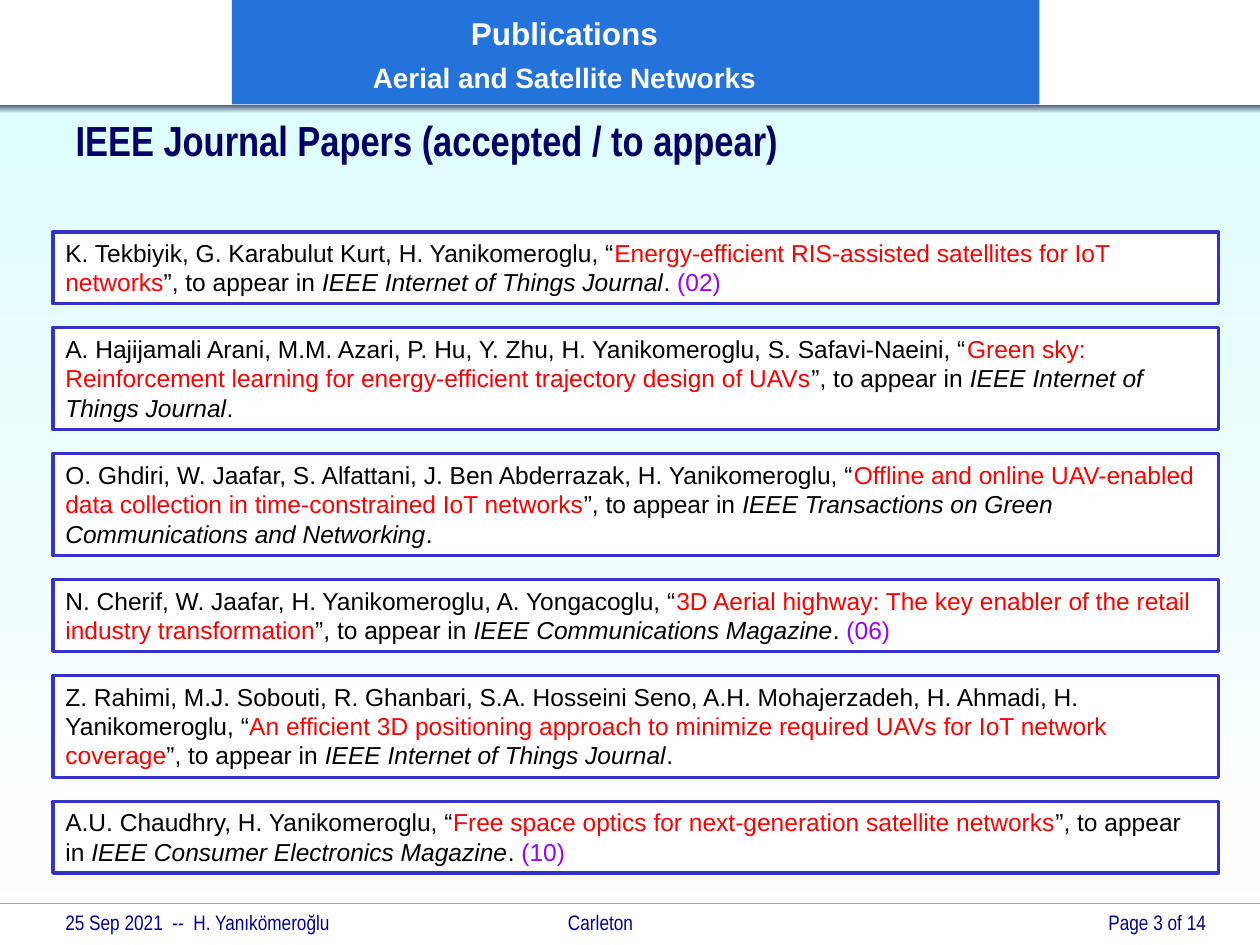
from pptx import Presentation
from pptx.dml.color import RGBColor
from pptx.enum.shapes import MSO_CONNECTOR as Link, MSO_SHAPE as Shape
from pptx.enum.text import MSO_ANCHOR as Anchor, PP_ALIGN as Align
from pptx.util import Inches, Pt
from lxml import etree

NAVY, BLACK, WHITE = "000099", "000000", "FFFFFF"
RED, VIOLET, SKY = "FF0000", "9900FF", "DFFDFD"
LINE, GAP = 0.24, 0.19

# authors, title, journal, note, lines of text
PAPERS = [
    ("K. Tekbiyik, G. Karabulut Kurt, H. Yanikomeroglu",
     "Energy-efficient RIS-assisted satellites for IoT networks",
     "IEEE Internet of Things Journal", "(02)", 2),
    ("A. Hajijamali Arani, M.M. Azari, P. Hu, Y. Zhu, H. Yanikomeroglu, "
     "S. Safavi-Naeini",
     "Green sky: Reinforcement learning for energy-efficient trajectory "
     "design of UAVs",
     "IEEE Internet of Things Journal", "", 3),
    ("O. Ghdiri, W. Jaafar, S. Alfattani, J. Ben Abderrazak, "
     "H. Yanikomeroglu",
     "Offline and online UAV-enabled data collection in time-constrained "
     "IoT networks",
     "IEEE Transactions on Green Communications and Networking", "", 3),
    ("N. Cherif, W. Jaafar, H. Yanikomeroglu, A. Yongacoglu",
     "3D Aerial highway: The key enabler of the retail industry "
     "transformation",
     "IEEE Communications Magazine", "(06)", 2),
    ("Z. Rahimi, M.J. Sobouti, R. Ghanbari, S.A. Hosseini Seno, "
     "A.H. Mohajerzadeh, H. Ahmadi, H. Yanikomeroglu",
     "An efficient 3D positioning approach to minimize required UAVs for "
     "IoT network coverage",
     "IEEE Internet of Things Journal", "", 3),
    ("A.U. Chaudhry, H. Yanikomeroglu",
     "Free space optics for next-generation satellite networks",
     "IEEE Consumer Electronics Magazine", "(10)", 2),
]


def color(hex):
    return RGBColor.from_string(hex)


def style(font, size, hex, name="Arial", bold=False):
    font.name, font.size, font.bold = name, Pt(size), bold
    font.color.rgb = color(hex)


def add_rect(slide, box, *fills):
    """One fill colour gives a plain box, two a top-down gradient."""
    rect = slide.shapes.add_shape(Shape.RECTANGLE, *map(Inches, box))
    rect.shadow.inherit = False
    rect.line.fill.background()
    if len(fills) == 1:
        rect.fill.solid()
        rect.fill.fore_color.rgb = color(fills[0])
    else:
        rect.fill.gradient()
        rect.fill.gradient_angle = 270
        for stop, hex in zip(rect.fill.gradient_stops, fills):
            stop.color.rgb = color(hex)
    return rect


def add_header(slide, left, top, width, height):
    add_rect(slide, (0, top + height, 10, 0.07), "475577", SKY)
    frame = add_rect(slide, (left, top, width, height), "2473DB").text_frame
    frame.vertical_anchor = Anchor.MIDDLE
    frame.margin_left, frame.margin_right = 0, Inches(1.13)
    frame.text = "Publications\nAerial and Satellite Networks"
    for para, size in zip(frame.paragraphs, (18, 16)):
        para.alignment = Align.CENTER
        para.line_spacing = 1.1
        style(para.font, size, WHITE, bold=True)
    frame.paragraphs[1].space_before = Pt(3.2)


def add_title(slide, left, top, width, height):
    title = slide.shapes.title
    title.left, title.top = Inches(left), Inches(top)
    title.width, title.height = Inches(width), Inches(height)
    frame = title.text_frame
    frame.text = "IEEE Journal Papers (accepted / to appear)"
    frame.vertical_anchor = Anchor.MIDDLE
    para = frame.paragraphs[0]
    para.alignment = Align.LEFT
    style(para.font, 24, "000066", "Arial Narrow", True)
    title.element.getparent().append(title.element)  # bring to front


def add_paper(slide, box, authors, name, journal, note):
    card = add_rect(slide, box, WHITE)
    card.line.color.rgb = color("3333CC")
    card.line.width = Pt(2)
    frame = card.text_frame
    frame.vertical_anchor = Anchor.TOP
    para = frame.paragraphs[0]
    para.alignment = Align.LEFT
    style(para.font, 14, BLACK)
    parts = [(authors + ", “", BLACK), (name, RED),
             ("”, to appear in ", BLACK), (journal, BLACK), (".", BLACK)]
    if note:
        parts.append((" " + note, VIOLET))
    for text, hex in parts:
        run = para.add_run()
        run.text = text
        run.font.color.rgb = color(hex)
        run.font.italic = text == journal


def add_list(slide, left, top, width):
    for *paper, lines in PAPERS:
        height = 0.09 + lines * LINE
        add_paper(slide, (left, top, width, height), *paper)
        top += height + GAP


def add_footer(slide, left, top, width):
    rule = slide.shapes.add_connector(
        Link.STRAIGHT, 0, Inches(top), Inches(10), Inches(top))
    rule.line.color.rgb = color("99CC00")
    rule.line.width = Pt(0.75)
    props = rule.element.spPr
    etree.SubElement(props, props.tag.replace("}spPr", "}effectLst").replace(
        "presentationml", "drawingml").replace("/2006/main", "/2006/main"))
    for text, start, wide, align in (
            ("25 Sep 2021  --  H. Yanıkömeroğlu", 0, 3.5, Align.LEFT),
            ("Carleton", 3.99, 1.5, Align.LEFT),
            ("Page 3 of 14", width - 2.17, 2.17, Align.RIGHT)):
        frame = slide.shapes.add_textbox(
            Inches(left + start), Inches(top),
            Inches(wide), Inches(0.3)).text_frame
        frame.word_wrap = True
        frame.text = text
        para = frame.paragraphs[0]
        para.alignment = align
        style(para.font, 12, NAVY, "Arial Narrow")


def main():
    deck = Presentation()
    deck.slide_width, deck.slide_height = Inches(10), Inches(7.5)
    slide = deck.slides.add_slide(deck.slide_layouts[5])
    add_rect(slide, (0, 0.86, 10, 6.64), SKY, WHITE)
    add_footer(slide, 0.42, 7.17, 9.25)
    add_header(slide, 1.84, 0, 6.41, 0.83)
    add_title(slide, 0.5, 0.9, 8.5, 0.42)
    add_list(slide, 0.42, 1.84, 9.25)
    deck.save("out.pptx")


if __name__ == "__main__":
    main()
